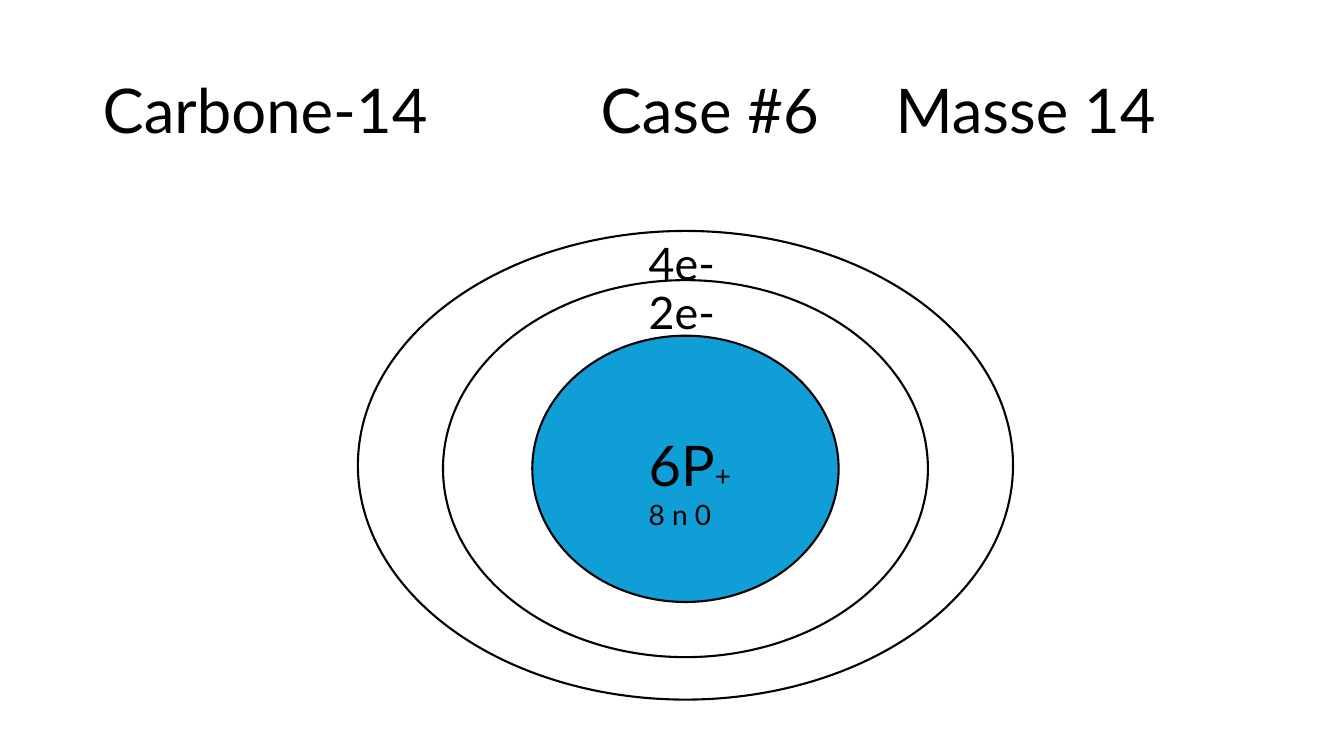
from lxml.etree import SubElement
from pptx import Presentation
from pptx.dml.color import RGBColor
from pptx.enum.shapes import MSO_SHAPE
from pptx.enum.text import MSO_ANCHOR
from pptx.oxml.ns import qn
from pptx.util import Cm, Pt

COLORS = {"ink": "000000", "nucleus": "0F9ED5"}
FONT = "Lato"


def add_run(para, text, size):
    run = para.add_run()
    run.text = text
    run.font.name = FONT
    run.font.size = Pt(size)
    run.font.color.rgb = RGBColor.from_string(COLORS["ink"])


def add_text(page, left, top, width, height, lines):
    """Place a text box; each line is a list of (text, size) runs."""
    box = page.shapes.add_textbox(Cm(left), Cm(top), Cm(width), Cm(height))
    frame = box.text_frame
    frame.word_wrap = True
    for index, line in enumerate(lines):
        para = frame.paragraphs[0] if index == 0 else frame.add_paragraph()
        for text, size in line:
            add_run(para, text, size)
    return frame


def add_heading(page, left, top, width, height):
    """Title line whose three parts are set apart by tab stops."""
    line = [("Carbone-14", 44), ("\tCase #6", 44), ("\tMasse 14", 44)]
    frame = add_text(page, left, top, width, height, [line])
    frame.vertical_anchor = MSO_ANCHOR.MIDDLE
    para = frame.paragraphs[0]
    tabs = SubElement(para._p.get_or_add_pPr(), qn("a:tabLst"))
    for stop in (12.55, 19.98):
        SubElement(tabs, qn("a:tab"), pos=str(Cm(stop)), algn="l")
    para.line_spacing = 0.9


def add_ellipse(page, center, top, width, height, fill=None):
    ellipse = page.shapes.add_shape(
        MSO_SHAPE.OVAL, Cm(center - width / 2), Cm(top), Cm(width), Cm(height))
    ellipse.shadow.inherit = False
    ellipse.line.color.rgb = RGBColor.from_string(COLORS["ink"])
    ellipse.line.width = Pt(1.5)
    if fill:
        ellipse.fill.solid()
        ellipse.fill.fore_color.rgb = RGBColor.from_string(COLORS[fill])
    else:
        ellipse.fill.background()


def add_atom(page, left, top, width, height):
    """Two electron shells around the nucleus, with labels in front."""
    center = left + width / 2
    label_left = left + 7.08
    shells = [("4e-", 0, width, height), ("2e-", 1.24, 12.22, 9.5)]
    for _, drop, shell_width, shell_height in shells:
        add_ellipse(page, center, top + drop, shell_width, shell_height)
    add_ellipse(page, center, top + 2.64, 7.72, 6.71, "nucleus")

    add_text(page, label_left, top + 4.9, 5.77, 2.82,
             [[("6P", 40), ("+", 20)], [("8 n 0", 20)]])
    for electrons, drop, _, _ in reversed(shells):
        add_text(page, label_left, top + drop, 3.56, 1.62, [[(electrons, 32)]])


def main():
    deck = Presentation()
    deck.slide_width, deck.slide_height = Cm(33.87), Cm(19.05)
    page = deck.slides.add_slide(deck.slide_layouts[6])
    add_heading(page, 2.34, 1.02, 29.21, 3.68)
    add_atom(page, 9.02, 5.82, 16.51, 11.81)
    deck.save("out.pptx")


if __name__ == "__main__":
    main()
